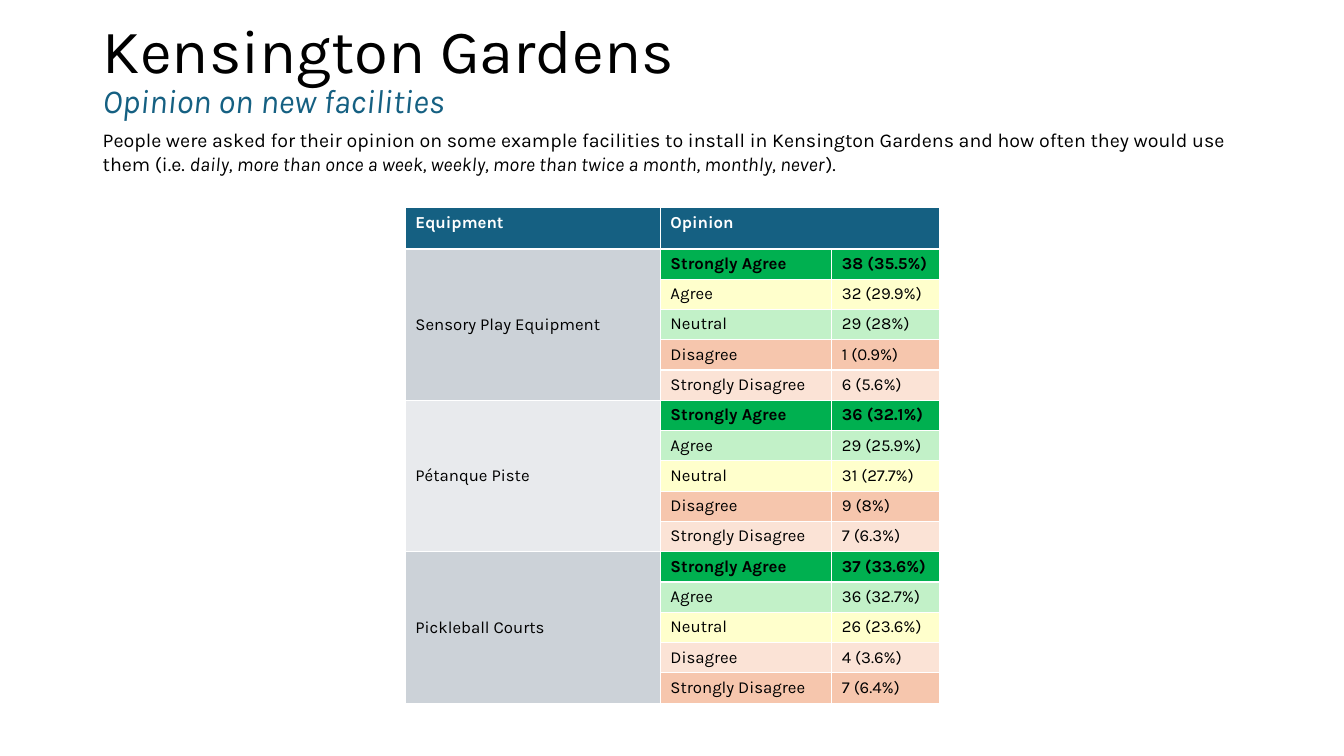
from pptx import Presentation
from pptx.dml.color import RGBColor
from pptx.enum.text import MSO_ANCHOR, MSO_AUTO_SIZE, PP_ALIGN
from pptx.util import Inches, Pt

MIDDLE, TOP = MSO_ANCHOR.MIDDLE, MSO_ANCHOR.TOP
NO_FIT = MSO_AUTO_SIZE.NONE
LEFT = PP_ALIGN.LEFT

BLACK = RGBColor(0x00, 0x00, 0x00)
WHITE = RGBColor(0xFF, 0xFF, 0xFF)
BLUE = RGBColor(0x15, 0x60, 0x82)
GREY = RGBColor(0xCC, 0xD2, 0xD8)
PALE_GREY = RGBColor(0xE8, 0xEA, 0xED)
GREEN = RGBColor(0x00, 0xB0, 0x50)
PALE_GREEN = RGBColor(0xC2, 0xF1, 0xC8)
YELLOW = RGBColor(0xFF, 0xFF, 0xCC)
ORANGE = RGBColor(0xF6, 0xC6, 0xAD)
PALE_ORANGE = RGBColor(0xFB, 0xE3, 0xD6)

FONT = "Karla"
HEADING = "Kensington Gardens"
SUBHEADING = "Opinion on new facilities"
INTRO = [
    ("People were asked for their opinion on some example facilities to install in "
     "Kensington Gardens and how often they would use them (i.e. ", False),
    ("daily, more than once a week, weekly, more than twice a month, monthly, never", True),
    (").", False),
]
HEADERS = ["Equipment", "Opinion"]
OPINIONS = ["Strongly Agree", "Agree", "Neutral", "Disagree", "Strongly Disagree"]
FACILITIES = [
    ("Sensory Play Equipment", GREY,
     ["38 (35.5%)", "32 (29.9%)", "29 (28%)", "1 (0.9%)", "6 (5.6%)"],
     [GREEN, YELLOW, PALE_GREEN, ORANGE, PALE_ORANGE]),
    ("Pétanque Piste", PALE_GREY,
     ["36 (32.1%)", "29 (25.9%)", "31 (27.7%)", "9 (8%)", "7 (6.3%)"],
     [GREEN, PALE_GREEN, YELLOW, ORANGE, PALE_ORANGE]),
    ("Pickleball Courts", GREY,
     ["37 (33.6%)", "36 (32.7%)", "26 (23.6%)", "4 (3.6%)", "7 (6.4%)"],
     [GREEN, PALE_GREEN, YELLOW, PALE_ORANGE, ORANGE]),
]
COLUMN_WIDTHS = [2.53, 1.7, 1.07]
HEADER_HEIGHT, ROW_HEIGHT = 0.41, 0.3


def write(frame, runs, size, color, bold=False):
    paragraph = frame.paragraphs[0]
    paragraph.alignment = LEFT
    for text, italic in runs:
        run = paragraph.add_run()
        run.text = text
        run.font.color.rgb = color
        formats = {"name": FONT, "size": Pt(size), "bold": bold, "italic": italic}
        for key, value in formats.items():
            setattr(run.font, key, value)
    return paragraph


def add_text(slide, box, runs, size, color):
    frame = slide.shapes.add_textbox(*map(Inches, box)).text_frame
    frame.word_wrap = True
    write(frame, runs, size, color)


def fill_cell(cell, text, fill, color=BLACK, bold=False, anchor=TOP):
    cell.fill.solid()
    cell.fill.fore_color.rgb = fill
    cell.vertical_anchor = anchor
    write(cell.text_frame, [(text, False)], 12, color, bold)


def add_heading(slide):
    title = slide.shapes.title
    title.left, title.top, title.width, title.height = map(Inches, (0.92, -0.19, 11.5, 1.45))
    frame = title.text_frame
    frame.auto_size = NO_FIT
    frame.vertical_anchor = MIDDLE
    write(frame, [(HEADING, False)], 44, BLACK).line_spacing = 0.9


def add_opinions(slide):
    group = len(OPINIONS)
    rows = 1 + group * len(FACILITIES)
    height = HEADER_HEIGHT + ROW_HEIGHT * (rows - 1)
    box = map(Inches, (4.02, 2.06, sum(COLUMN_WIDTHS), height))
    table = slide.shapes.add_table(rows, len(COLUMN_WIDTHS), *box).table
    table.horz_banding = False
    for column, width in zip(table.columns, COLUMN_WIDTHS):
        column.width = Inches(width)
    for index, row in enumerate(table.rows):
        row.height = Inches(ROW_HEIGHT if index else HEADER_HEIGHT)

    table.cell(0, 1).merge(table.cell(0, 2))
    for column, header in enumerate(HEADERS):
        fill_cell(table.cell(0, column), header, BLUE, WHITE, True)

    for number, (facility, shade, votes, fills) in enumerate(FACILITIES):
        first = 1 + number * group
        table.cell(first, 0).merge(table.cell(first + group - 1, 0))
        fill_cell(table.cell(first, 0), facility, shade, anchor=MIDDLE)
        for offset, (opinion, vote, fill) in enumerate(zip(OPINIONS, votes, fills)):
            for column, text in ((1, opinion), (2, vote)):
                fill_cell(table.cell(first + offset, column), text, fill, bold=offset == 0)


def main():
    deck = Presentation()
    deck.slide_width, deck.slide_height = Inches(13.33), Inches(7.5)
    slide = deck.slides.add_slide(deck.slide_layouts[5])
    add_heading(slide)
    add_text(slide, (0.92, 0.74, 5.48, 0.5), [(SUBHEADING, True)], 24, BLUE)
    add_text(slide, (0.92, 1.22, 11.83, 0.57), INTRO, 14, BLACK)
    add_opinions(slide)
    deck.save("out.pptx")


if __name__ == "__main__":
    main()
